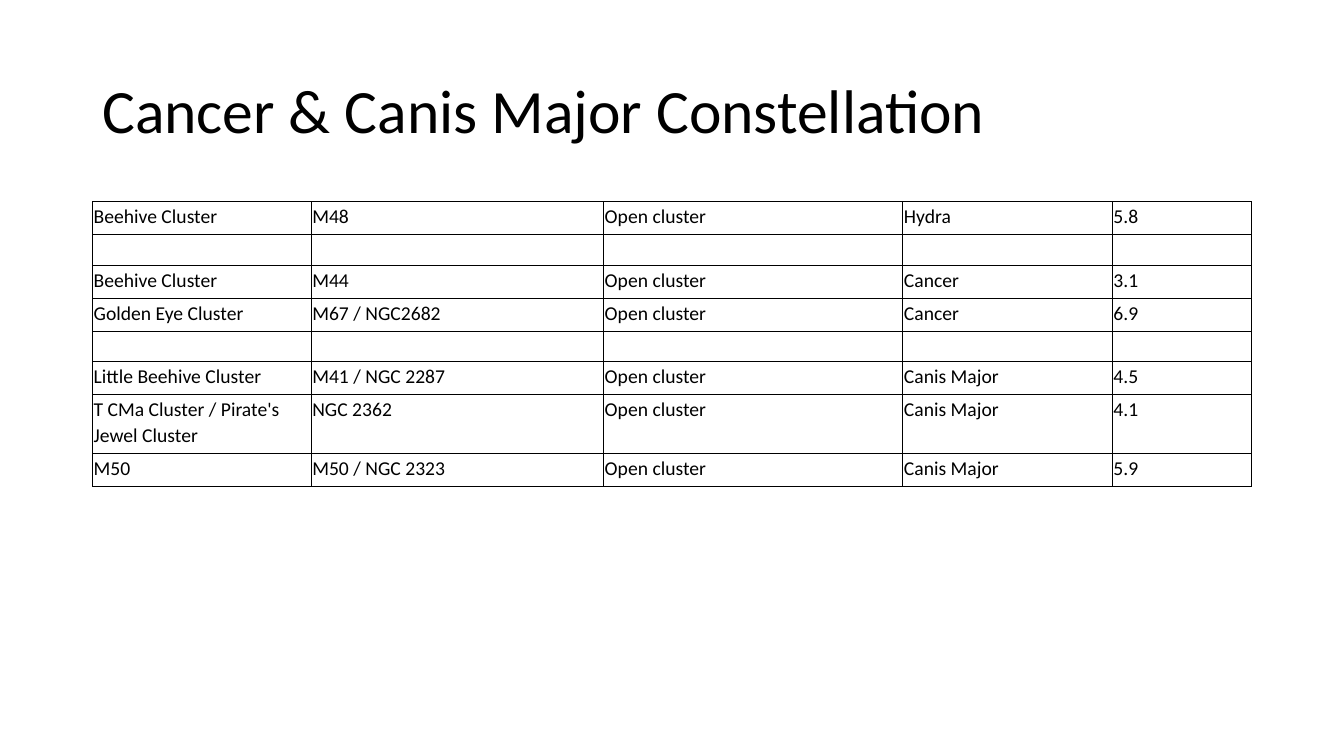
from dataclasses import astuple, dataclass

from lxml.etree import SubElement
from pptx import Presentation
from pptx.dml.color import RGBColor
from pptx.enum.text import MSO_ANCHOR
from pptx.oxml.ns import qn
from pptx.slide import Slide
from pptx.table import _Cell
from pptx.text.text import Font
from pptx.util import Cm, Pt

FONT_NAME = "Calibri"
BLACK = "000000"
LEFT = 2.33
COLUMN_WIDTHS = (5.51, 7.37, 7.54, 5.28, 3.51)


@dataclass
class Cluster:
    name: str = ""
    catalogue: str = ""
    kind: str = ""
    constellation: str = ""
    magnitude: str = ""
    height: float = 0.83


def open_cluster(name: str, catalogue: str, constellation: str,
                 magnitude: str, height: float = 0.83) -> Cluster:
    return Cluster(name, catalogue, "Open cluster", constellation, magnitude, height)


GAP = Cluster(height=0.77)
CLUSTERS = (
    open_cluster("Beehive Cluster", "M48", "Hydra", "5.8"),
    GAP,
    open_cluster("Beehive Cluster", "M44", "Cancer", "3.1"),
    open_cluster("Golden Eye Cluster", "M67 / NGC2682", "Cancer", "6.9"),
    GAP,
    open_cluster("Little Beehive Cluster", "M41 / NGC 2287", "Canis Major", "4.5"),
    open_cluster("T CMa Cluster / Pirate's Jewel Cluster", "NGC 2362",
                 "Canis Major", "4.1", height=1.49),
    open_cluster("M50", "M50 / NGC 2323", "Canis Major", "5.9"),
)


def color(value: str) -> RGBColor:
    return RGBColor.from_string(value)


def style_font(font: Font, size: float) -> None:
    font.name = FONT_NAME
    font.size = Pt(size)
    font.color.rgb = color(BLACK)


def add_title(slide: Slide, text: str) -> None:
    shape = slide.shapes.add_textbox(Cm(LEFT), Cm(1.01), Cm(29.21), Cm(3.68))
    text_frame = shape.text_frame
    text_frame.word_wrap = True
    text_frame.vertical_anchor = MSO_ANCHOR.MIDDLE
    text_frame.text = text
    paragraph = text_frame.paragraphs[0]
    paragraph.line_spacing = 0.9
    style_font(paragraph.runs[0].font, 44)


def add_borders(cell: _Cell) -> None:
    properties = cell._tc.get_or_add_tcPr()
    for side in ("a:lnL", "a:lnR", "a:lnT", "a:lnB"):
        line = SubElement(properties, qn(side), w=str(Pt(0.5)))
        fill = SubElement(line, qn("a:solidFill"))
        SubElement(fill, qn("a:srgbClr"), val=BLACK)


def fill_cell(cell: _Cell, text: str) -> None:
    cell.margin_left = cell.margin_top = cell.margin_right = Cm(0.03)
    cell.margin_bottom = Cm(0.13)
    add_borders(cell)
    cell.fill.background()
    paragraph = cell.text_frame.paragraphs[0]
    if text:
        paragraph.text = text
        paragraph.line_spacing = 1.1
        style_font(paragraph.runs[0].font, 14)
    else:
        # An empty cell takes its line height from the end mark
        SubElement(paragraph._p, qn("a:endParaRPr"), sz="1400")


def add_cluster_table(slide: Slide) -> None:
    height = sum(cluster.height for cluster in CLUSTERS)
    shape = slide.shapes.add_table(len(CLUSTERS), len(COLUMN_WIDTHS), Cm(LEFT),
                                   Cm(5.08), Cm(sum(COLUMN_WIDTHS)), Cm(height))
    table = shape.table
    table.first_row = False
    table.horz_banding = False
    for column, width in zip(table.columns, COLUMN_WIDTHS):
        column.width = Cm(width)
    for row, cluster in zip(table.rows, CLUSTERS):
        row.height = Cm(cluster.height)
        for cell, text in zip(row.cells, astuple(cluster)[:-1]):
            fill_cell(cell, text)


def main() -> None:
    presentation = Presentation()
    presentation.slide_width = Cm(33.87)
    presentation.slide_height = Cm(19.05)
    slide = presentation.slides.add_slide(presentation.slide_layouts[6])

    # Title
    add_title(slide, "Cancer & Canis Major Constellation")

    # Clusters, grouped by constellation
    add_cluster_table(slide)

    presentation.save("out.pptx")


if __name__ == "__main__":
    main()
